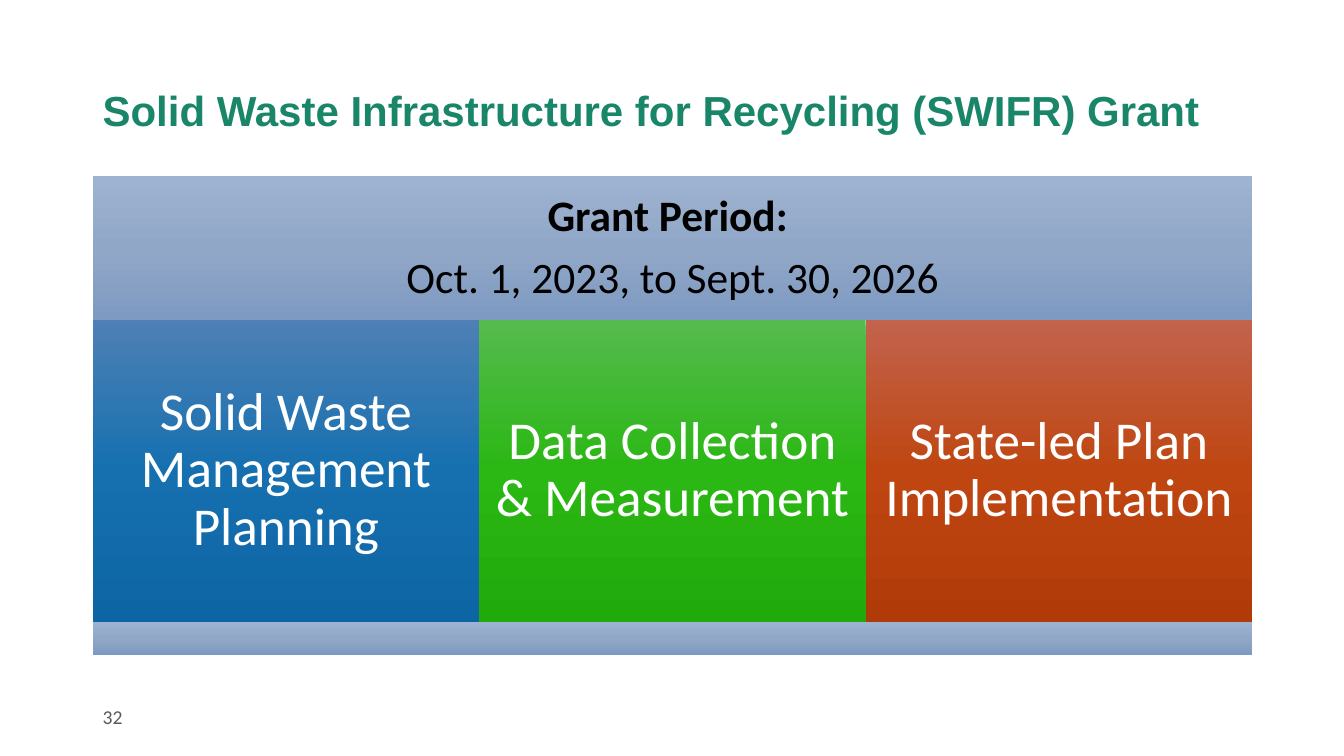
from copy import deepcopy

from pptx import Presentation
from pptx import util as u
from pptx.dml.color import RGBColor
from pptx.enum import shapes, text
from pptx.oxml import ns

WHITE = RGBColor(0xFF, 0xFF, 0xFF)
BLACK = RGBColor(0x00, 0x00, 0x00)
GREY = RGBColor(0x59, 0x59, 0x59)
TITLE_GREEN = RGBColor(0x19, 0x85, 0x69)
BAND_BLUES = (RGBColor(0x9E, 0xB3, 0xD1), RGBColor(0x91, 0xA7, 0xC7), RGBColor(0x7D, 0x9A, 0xC2))
BLUES = (RGBColor(0x4E, 0x80, 0xB5), RGBColor(0x16, 0x70, 0xB0), RGBColor(0x0D, 0x65, 0xA3))
GREENS = (RGBColor(0x55, 0xBB, 0x4E), RGBColor(0x2B, 0xB7, 0x14), RGBColor(0x21, 0xAA, 0x0B))
ORANGES = (RGBColor(0xC2, 0x63, 0x4D), RGBColor(0xBF, 0x46, 0x11), RGBColor(0xB1, 0x3B, 0x08))

LEFT = 0.92
WIDTH = 11.5
PILLAR_TOP = 3.17
PILLAR_HEIGHT = 3
PILLARS = (
    ("Solid Waste Management Planning", BLUES),
    ("Data Collection & Measurement", GREENS),
    ("State-led Plan Implementation", ORANGES),
)


def add_run(paragraph, words, size, color, font="Calibri", bold=False):
    run = paragraph.add_run()
    run.text = words
    run.font.name = font
    run.font.size = u.Pt(size)
    run.font.bold = bold
    run.font.color.rgb = color


def add_label(slide, top, height, words, size, color, **style):
    label = slide.shapes.add_textbox(
        u.Inches(LEFT), u.Inches(top), u.Inches(WIDTH), u.Inches(height))
    frame = label.text_frame
    frame.word_wrap = True
    frame.vertical_anchor = text.MSO_ANCHOR.MIDDLE
    paragraph = frame.paragraphs[0]
    paragraph.line_spacing = 0.9
    add_run(paragraph, words, size, color, **style)


def fill_downwards(shape, colors):
    shape.fill.gradient()
    shape.fill.gradient_angle = 270
    stop_list = shape.element.spPr.find(".//" + ns.qn("a:gsLst"))
    stop_list.insert(1, deepcopy(stop_list[0]))
    for index, (stop, color) in enumerate(zip(shape.fill.gradient_stops, colors)):
        stop.position = index / 2
        stop.color.rgb = color


def add_block(slide, left, top, width, height, colors):
    block = slide.shapes.add_shape(
        shapes.MSO_SHAPE.RECTANGLE,
        u.Inches(left), u.Inches(top), u.Inches(width), u.Inches(height))
    block.shadow.inherit = False
    block.line.fill.background()
    fill_downwards(block, colors)
    return block


def write_centred(block, lines, size, color, inset, space_after):
    frame = block.text_frame
    frame.word_wrap = True
    frame.vertical_anchor = text.MSO_ANCHOR.MIDDLE
    frame.margin_left = frame.margin_right = u.Inches(inset)
    frame.margin_top = frame.margin_bottom = u.Inches(inset)
    for index, (words, bold) in enumerate(lines):
        paragraph = frame.add_paragraph() if index else frame.paragraphs[0]
        paragraph.alignment = text.PP_ALIGN.CENTER
        paragraph.line_spacing = 0.9
        paragraph.space_after = u.Pt(space_after)
        add_run(paragraph, words, size, color, bold=bold)


def main():
    presentation = Presentation()
    presentation.slide_width = u.Inches(13.33)
    presentation.slide_height = u.Inches(7.5)
    slide = presentation.slides.add_slide(presentation.slide_layouts[6])

    add_label(slide, 0.4, 1.45, "Solid Waste Infrastructure for Recycling (SWIFR) Grant",
              30, TITLE_GREEN, font="Arial", bold=True)

    period = add_block(slide, LEFT, 1.75, WIDTH, 1.43, BAND_BLUES)
    write_centred(period, (("Grant Period: ", True), ("Oct. 1, 2023, to Sept. 30, 2026", False)),
                  31, BLACK, 0.13, 11)

    pillar_width = WIDTH / len(PILLARS)
    for index, (words, colors) in enumerate(PILLARS):
        pillar = add_block(slide, LEFT + index * pillar_width, PILLAR_TOP,
                           pillar_width, PILLAR_HEIGHT, colors)
        write_centred(pillar, ((words, False),), 38, WHITE, 0.16, 13)

    add_block(slide, LEFT, PILLAR_TOP + PILLAR_HEIGHT, WIDTH, 0.33, BAND_BLUES)
    add_label(slide, 6.9, 0.45, "32", 14, GREY)

    presentation.save("out.pptx")


if __name__ == "__main__":
    main()
